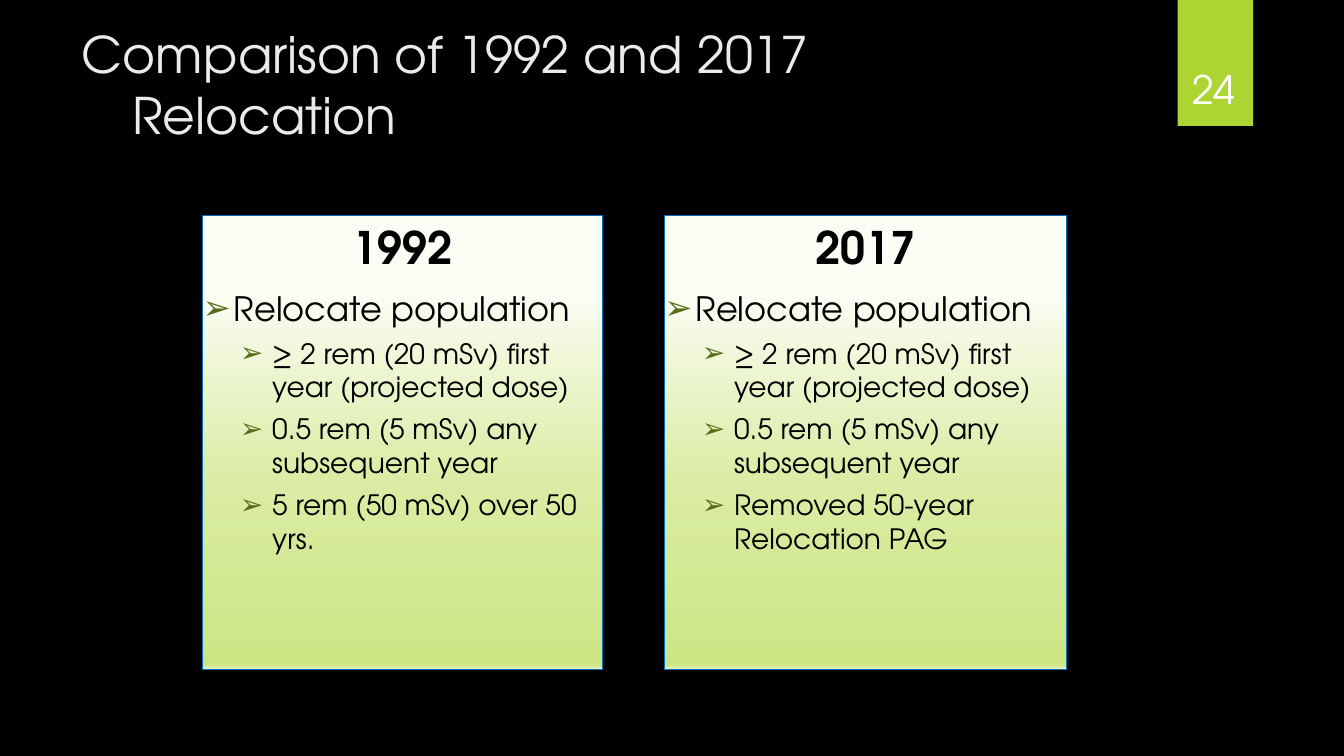
from lxml.etree import SubElement
from pptx import Presentation
from pptx.dml.color import RGBColor
from pptx.enum.shapes import MSO_SHAPE
from pptx.enum.text import MSO_ANCHOR, MSO_AUTO_SIZE, PP_ALIGN
from pptx.oxml.ns import qn
from pptx.util import Inches, Pt

FONT = "TeX Gyre Adventor"
COLORS = {
    "background": "000000",
    "tab": "ACD433",
    "title": "EBEBEB",
    "number": "FFFFFF",
    "text": "000000",
    "bullet": "576D17",
    "border": "0070C0",
}
PANEL_STOPS = [(16, "FBFDF5"), (59, "DAECA3"), (99, "CDE585"), (100, "E6F2C2")]
SHARED_LINES = [
    (0, "Relocate population"),
    (1, "≥ 2 rem (20 mSv) first year (projected dose)"),
    (1, "0.5 rem (5 mSv) any subsequent year"),
]
LEVELS = [
    {"size": 24, "margin": 0.31, "indent": -0.31, "before": 10},
    {"size": 20, "margin": 0.69, "indent": -0.32, "before": 6},
]


def rgb(name):
    return RGBColor.from_string(COLORS[name])


def place(shape, box):
    shape.left, shape.top, shape.width, shape.height = map(Inches, box)


def set_font(paragraph, size, color, bold=False):
    font = paragraph.font
    font.name, font.size, font.bold = FONT, Pt(size), bold
    font.color.rgb = rgb(color)


def set_indent(paragraph, margin, indent):
    properties = paragraph._p.get_or_add_pPr()
    properties.set("marL", str(Inches(margin)))
    properties.set("indent", str(Inches(indent)))
    return properties


def add_bullet(properties):
    color = SubElement(properties, qn("a:buClr"))
    SubElement(color, qn("a:srgbClr"), val=COLORS["bullet"])
    SubElement(properties, qn("a:buChar"), char="➢")


def fill_gradient(shape, stops):
    shape.fill.gradient()
    shape.fill.gradient_angle = 270
    stop_list = shape._element.spPr.find(qn("a:gradFill")).find(qn("a:gsLst"))
    for old_stop in list(stop_list):
        stop_list.remove(old_stop)
    for percent, color in stops:
        stop = SubElement(stop_list, qn("a:gs"), pos=str(percent * 1000))
        SubElement(stop, qn("a:srgbClr"), val=color)


def build_title(title, box, text):
    place(title, box)
    frame = title.text_frame
    frame.word_wrap = True
    frame.auto_size = MSO_AUTO_SIZE.NONE
    frame.vertical_anchor = MSO_ANCHOR.BOTTOM
    frame.text = text
    paragraph = frame.paragraphs[0]
    paragraph.alignment = PP_ALIGN.LEFT
    tabs = SubElement(set_indent(paragraph, 0, 0), qn("a:tabLst"))
    SubElement(tabs, qn("a:tab"), pos=str(Inches(0.5)), algn="l")
    set_font(paragraph, 36, "title")


def build_page_number(slide, box, number):
    left, top, width, height = box
    tab = slide.shapes.add_shape(MSO_SHAPE.RECTANGLE, *map(Inches, box))
    tab.shadow.inherit = False
    tab.fill.solid()
    tab.fill.fore_color.rgb = rgb("tab")
    tab.line.fill.background()
    label_box = (left - 0.1, top + 0.32, width + 0.17, height - 0.41)
    label = slide.shapes.add_textbox(*map(Inches, label_box))
    frame = label.text_frame
    frame.word_wrap = True
    frame.vertical_anchor = MSO_ANCHOR.BOTTOM
    frame.text = number
    paragraph = frame.paragraphs[0]
    paragraph.alignment = PP_ALIGN.CENTER
    set_font(paragraph, 28, "number")


def build_panel(panel, box, year, lines):
    place(panel, box)
    fill_gradient(panel, PANEL_STOPS)
    panel.line.color.rgb = rgb("border")
    panel.line.width = Pt(0.75)
    frame = panel.text_frame
    frame.word_wrap = True
    frame.auto_size = MSO_AUTO_SIZE.NONE
    frame.vertical_anchor = MSO_ANCHOR.TOP
    frame.margin_left = frame.margin_right = 0
    frame.margin_top = frame.margin_bottom = Inches(0.04)
    frame.text = year
    heading = frame.paragraphs[0]
    heading.alignment = PP_ALIGN.CENTER
    heading.space_before = Pt(0)
    SubElement(set_indent(heading, 0, 0), qn("a:buNone"))
    set_font(heading, 32, "text", bold=True)
    for level, text in lines:
        style = LEVELS[level]
        paragraph = frame.add_paragraph()
        paragraph.text = text
        paragraph.level = level
        paragraph.space_before = Pt(style["before"])
        add_bullet(set_indent(paragraph, style["margin"], style["indent"]))
        set_font(paragraph, style["size"], "text")


def build_comparison_slide(presentation):
    slide = presentation.slides.add_slide(presentation.slide_layouts[3])
    slide.background.fill.solid()
    slide.background.fill.fore_color.rgb = rgb("background")
    title, left_panel, right_panel = slide.placeholders
    build_title(title, (0.71, 0.32, 10.41, 1.16),
                "Comparison of 1992 and 2017\v\tRelocation")
    build_panel(left_panel, (2.01, 2.14, 3.97, 4.5), "1992",
                SHARED_LINES + [(1, "5 rem (50 mSv) over 50 yrs.")])
    build_panel(right_panel, (6.59, 2.14, 3.99, 4.5), "2017",
                SHARED_LINES + [(1, "Removed 50-year Relocation PAG")])
    build_page_number(slide, (11.68, 0, 0.75, 1.25), "24")


def main():
    presentation = Presentation()
    presentation.slide_width = Inches(13.33)
    presentation.slide_height = Inches(7.5)
    build_comparison_slide(presentation)
    presentation.save("out.pptx")


if __name__ == "__main__":
    main()
